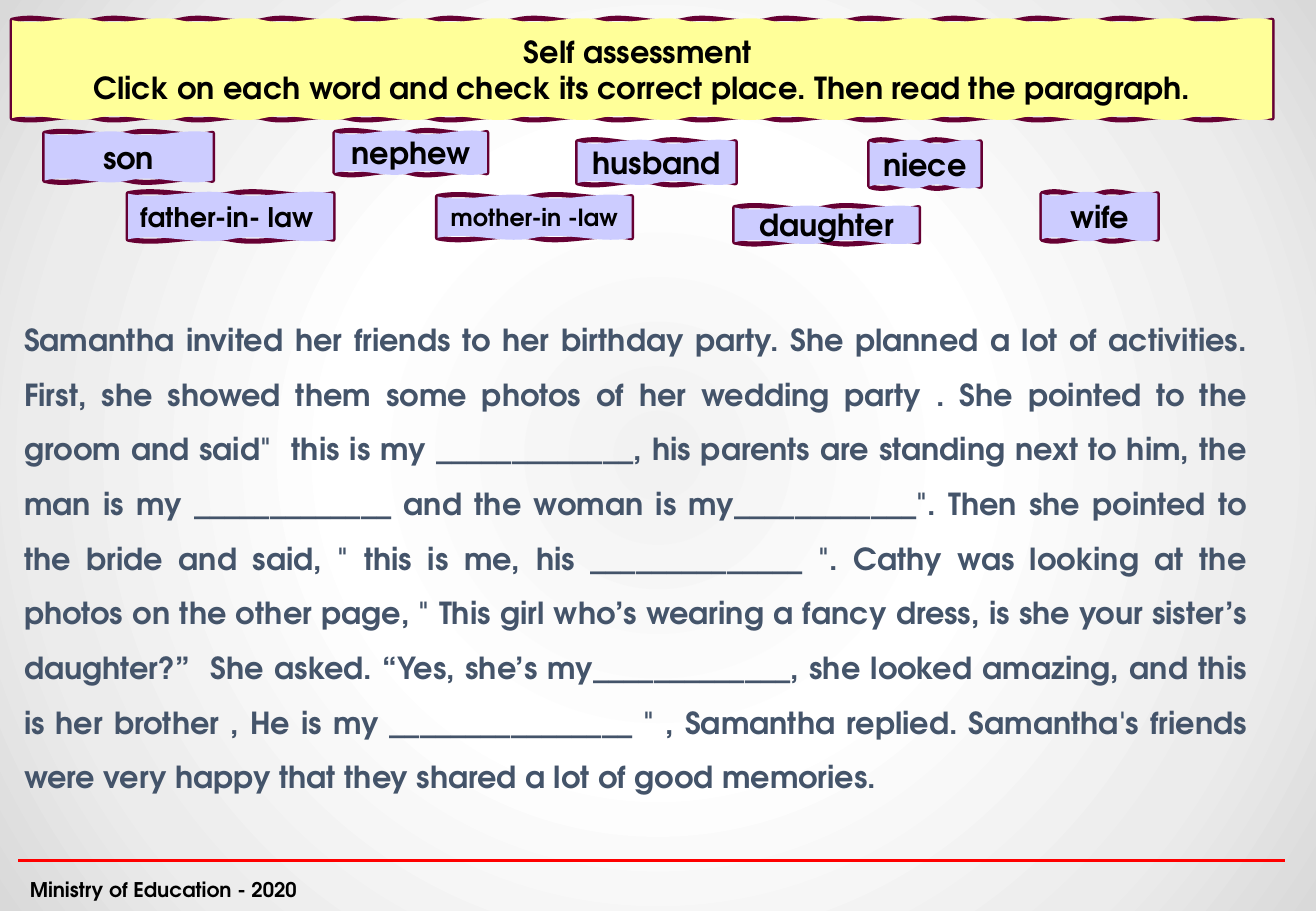
import copy

import lxml.etree
import pptx
import pptx.dml.color
import pptx.enum.shapes
import pptx.enum.text
import pptx.util

Pt = pptx.util.Pt
RGBColor = pptx.dml.color.RGBColor
PP_ALIGN = pptx.enum.text.PP_ALIGN
MSO_ANCHOR = pptx.enum.text.MSO_ANCHOR
MSO_AUTO_SIZE = pptx.enum.text.MSO_AUTO_SIZE

# Content
HEADING = [
    "Self assessment ",
    "Click on each word and check its correct place. Then read the paragraph.",
]
STORY = (
    "Samantha invited her friends to her birthday party. She planned a lot of activities. "
    "First, she showed them some photos of her wedding party . She pointed to the groom "
    'and said"  this is my _____________, his parents are standing next to him, the man is '
    'my _____________ and the woman is my____________". Then she pointed to the bride and '
    'said, " this is me, his ______________ ". Cathy was looking at the photos on the other '
    'page, " This girl who’s wearing a fancy dress, is she your sister’s daughter?”  She '
    "asked. “Yes, she’s my_____________, she looked amazing, and this is her brother , He is "
    'my ________________ " , Samantha replied. Samantha\'s friends were very happy that they '
    "shared a lot of good memories."
)
# word, (left, top, width, height), font size
WORDS = [
    ("husband", (342.4, 84, 93.5, 24.5), 18),
    ("son", (26.5, 79, 99.5, 28), 18),
    ("mother-in -law", (259.3, 116.5, 115, 24.5), 14),
    ("father-in- law ", (76, 114.8, 121.5, 27), 16),
    ("niece", (515.5, 84, 65.5, 26.5), 18),
    ("daughter", (435.5, 123, 109, 20.5), 18),
    ("nephew", (198.5, 78.5, 90, 24), 18),
    ("wife", (617.5, 114.8, 68.5, 27), 18),
]
FOOTER = "Ministry of Education - 2020"

# Style and layout
FONT = "TeX Gyre Adventor"
BLACK = RGBColor(0x00, 0x00, 0x00)
SLATE = RGBColor(0x44, 0x54, 0x6A)
YELLOW = RGBColor(0xFF, 0xFF, 0x99)
LILAC = RGBColor(0xCC, 0xCC, 0xFF)
PLUM = RGBColor(0x66, 0x00, 0x33)
RED = RGBColor(0xFF, 0x00, 0x00)
BACKDROP = [(0, "F2F2F2"), (39, "FFFFFF"), (78, "ECECEC"), (100, "D9D9D9")]
BANNER_BOX = (7.2, 12, 746.8, 58)
STORY_BOX = (7.2, 176.1, 739.4, 301.5)
FOOTER_BOX = (10.6, 516.6, 174, 21.5)
RULE_Y, RULE_LEFT, RULE_RIGHT = 510, 10.8, 761.8
WAVE_LENGTH, WAVE_PULL = 50, 4
A = "http://schemas.openxmlformats.org/drawingml/2006/main"


def points(box):
    return [Pt(value) for value in box]


def write(frame, text, size, color, align):
    frame.text = text
    for paragraph in frame.paragraphs:
        paragraph.alignment = align
        for run in paragraph.runs:
            run.font.name = FONT
            run.font.size = Pt(size)
            run.font.bold = True
            run.font.color.rgb = color


def bend_edges(contour, pull):
    """Turn each level line into an S-shaped curve between its two ends."""
    last_x = last_y = 0
    for step in contour.findall("*"):
        corner = step.find(f"{{{A}}}pt")
        if corner is None:
            continue
        x, y = int(corner.get("x")), int(corner.get("y"))
        if step.tag == f"{{{A}}}lnTo" and y == last_y:
            third = (x - last_x) // 3
            curve = lxml.etree.Element(f"{{{A}}}cubicBezTo")
            for cx, cy in [(last_x + third, y - pull), (x - third, y + pull), (x, y)]:
                lxml.etree.SubElement(curve, f"{{{A}}}pt", x=str(cx), y=str(cy))
            contour.replace(step, curve)
        last_x, last_y = x, y


def add_wavy_card(slide, box, fill):
    """Add a card with a wavy border, partly covered by a fill waving the other way."""
    left, top, width, height = box
    waves = max(2, round(width / WAVE_LENGTH))
    knots = [left + width * i / waves for i in range(waves + 1)]
    outline = [(x, top) for x in knots] + [(x, top + height) for x in reversed(knots)]
    outline = [(Pt(x), Pt(y)) for x, y in outline]
    builder = slide.shapes.build_freeform(*outline[0])
    builder.add_line_segments(outline[1:], close=True)
    card = builder.convert_to_shape()
    card.shadow.inherit = False
    card.fill.solid()
    card.fill.fore_color.rgb = fill
    card.line.color.rgb = PLUM
    card.line.width = Pt(3)

    border = card._element.spPr.find(f".//{{{A}}}path")
    inside = copy.deepcopy(border)
    border.addnext(inside)
    border.set("fill", "none")
    inside.set("stroke", "0")
    bend_edges(border, Pt(WAVE_PULL))
    bend_edges(inside, -Pt(WAVE_PULL))
    return card


def paint_backdrop(slide):
    slide.background.fill.solid()
    solid = slide.background._cSld.find(f".//{{{A}}}solidFill")
    stops = "".join(
        f'<a:gs pos="{pos * 1000}"><a:srgbClr val="{color}"/></a:gs>'
        for pos, color in BACKDROP
    )
    gradient = lxml.etree.fromstring(
        f'<a:gradFill xmlns:a="{A}" rotWithShape="1"><a:gsLst>{stops}</a:gsLst>'
        '<a:path path="circle"><a:fillToRect l="50000" t="50000" r="50000" b="50000"/>'
        "</a:path></a:gradFill>"
    )
    solid.getparent().replace(solid, gradient)


def main():
    deck = pptx.Presentation()
    deck.slide_width, deck.slide_height = Pt(780), Pt(540)
    slide = deck.slides.add_slide(deck.slide_layouts[5])
    paint_backdrop(slide)

    # Banner with the heading in front of it
    heading = slide.shapes.title
    banner = add_wavy_card(slide, BANNER_BOX, YELLOW)
    banner._element.addnext(heading._element)
    heading.left, heading.top, heading.width, heading.height = points(BANNER_BOX)
    heading.text_frame.auto_size = MSO_AUTO_SIZE.NONE
    heading.text_frame.vertical_anchor = MSO_ANCHOR.MIDDLE
    write(heading.text_frame, "\n".join(HEADING), 18, BLACK, PP_ALIGN.CENTER)

    # Story with gaps
    story = slide.shapes.add_textbox(*points(STORY_BOX)).text_frame
    story.word_wrap = True
    story.auto_size = MSO_AUTO_SIZE.SHAPE_TO_FIT_TEXT
    write(story, STORY, 18, SLATE, PP_ALIGN.JUSTIFY)
    story.paragraphs[0].line_spacing = 1.5

    # Word cards
    for word, box, size in WORDS:
        label = add_wavy_card(slide, box, LILAC).text_frame
        label.word_wrap = False
        label.vertical_anchor = MSO_ANCHOR.MIDDLE
        write(label, word, size, BLACK, PP_ALIGN.CENTER)

    # Footer rule and text
    rule = slide.shapes.add_connector(
        pptx.enum.shapes.MSO_CONNECTOR.STRAIGHT,
        Pt(RULE_LEFT), Pt(RULE_Y), Pt(RULE_RIGHT), Pt(RULE_Y),
    )
    rule.line.color.rgb = RED
    rule.line.width = Pt(1.5)
    lxml.etree.SubElement(rule._element.spPr, f"{{{A}}}effectLst")
    footer = slide.shapes.add_textbox(*points(FOOTER_BOX)).text_frame
    footer.word_wrap = False
    footer.auto_size = MSO_AUTO_SIZE.SHAPE_TO_FIT_TEXT
    write(footer, FOOTER, 12, BLACK, PP_ALIGN.LEFT)

    deck.save("out.pptx")


if __name__ == "__main__":
    main()
